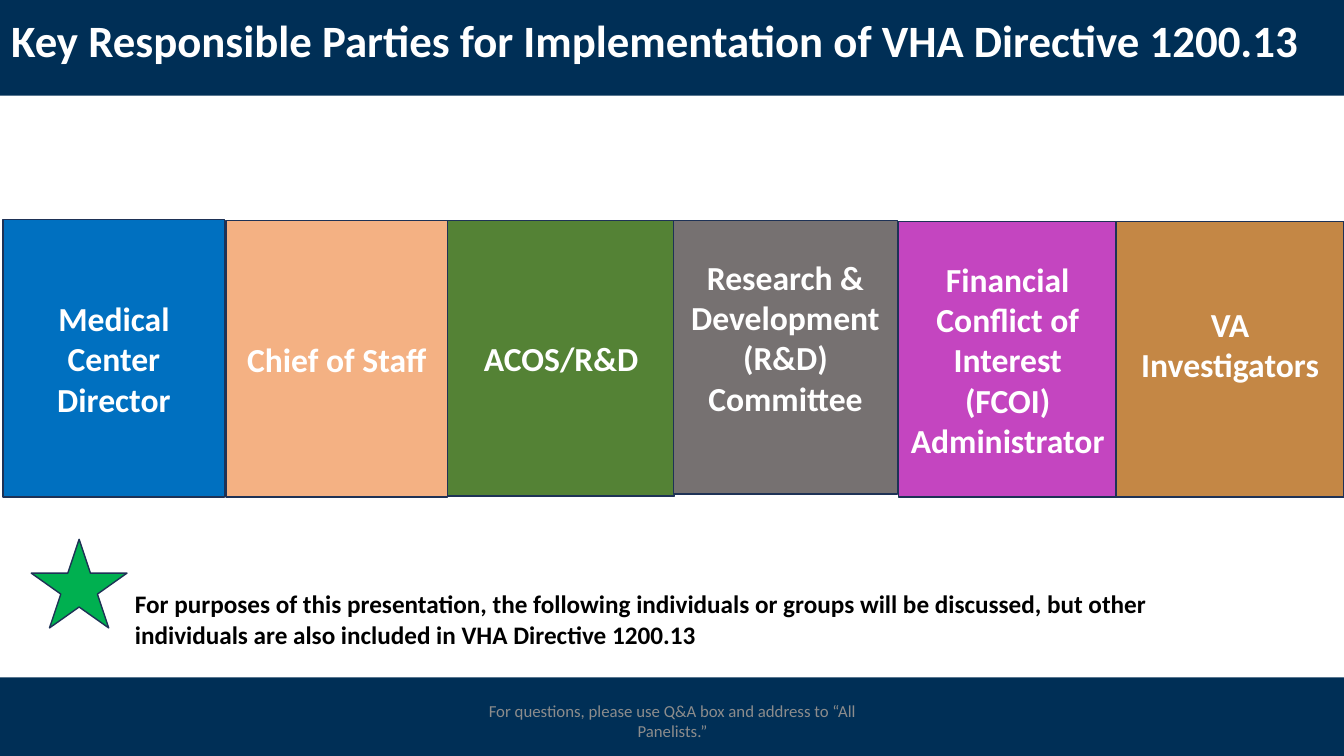
from dataclasses import dataclass

from pptx import Presentation
from pptx.dml.color import RGBColor
from pptx.enum.shapes import MSO_SHAPE as Shape
from pptx.enum.text import MSO_ANCHOR as Anchor, MSO_AUTO_SIZE as Fit, PP_ALIGN as Align
from pptx.util import Emu, Pt

SCALE = 9144  # EMU in one px, at 100 px to the inch
WIDE, HIGH = 1333, 750
FONT = "Calibri"
COLORS = {
    "navy": "002F56",
    "edge": "1E3256",
    "white": "FFFFFF",
    "black": "000000",
    "mute": "8C8C8C",
    "blue": "0070C0",
    "peach": "F4B183",
    "olive": "548235",
    "gray": "767171",
    "plum": "C445C0",
    "tan": "C48745",
    "green": "00B050",
}


@dataclass
class Box:
    left: int
    top: int
    width: int
    height: int


@dataclass
class Party:
    name: str
    color: str
    box: Box
    lift: int = 0  # room kept free below the text


PARTIES = [
    Party("Medical Center Director", "blue", Box(3, 218, 220, 275)),
    Party("Chief of Staff", "peach", Box(224, 219, 220, 274)),
    Party("ACOS/R&D", "olive", Box(444, 219, 225, 273)),
    Party("Research & Development (R&D) Committee", "gray", Box(668, 219, 222, 271), 40),
    Party("Financial Conflict of Interest (FCOI) Administrator", "plum", Box(891, 220, 217, 273)),
    Party("VA Investigators", "tan", Box(1107, 220, 226, 273), 30),
]


def px(size: int) -> Emu:
    return Emu(size * SCALE)


def edges(box: Box) -> tuple:
    return px(box.left), px(box.top), px(box.width), px(box.height)


def tint(name: str) -> RGBColor:
    return RGBColor.from_string(COLORS[name])


def write(shape, text: str, *, size: int, color: str = "white", bold: bool = True,
          align=Align.LEFT, anchor=Anchor.MIDDLE, lift: int = 0, space: float = 1.0) -> None:
    frame = shape.text_frame
    frame.word_wrap = True
    frame.auto_size = Fit.NONE
    frame.vertical_anchor = anchor
    frame.margin_left = frame.margin_right = px(10)
    frame.margin_top, frame.margin_bottom = px(5), px(5 + lift)
    frame.text = text
    para = frame.paragraphs[0]
    para.alignment = align
    para.line_spacing = space
    font = para.runs[0].font
    font.name, font.size, font.bold = FONT, Pt(size), bold
    font.color.rgb = tint(color)


def draw(slide, kind, box: Box, fill: str, edge: str = ""):
    shape = slide.shapes.add_shape(kind, *edges(box))
    shape.shadow.inherit = False
    shape.fill.solid()
    shape.fill.fore_color.rgb = tint(fill)
    if edge:
        shape.line.color.rgb = tint(edge)
        shape.line.width = Pt(1)
    else:
        shape.line.fill.background()
    return shape


def main() -> None:
    deck = Presentation()
    deck.slide_width, deck.slide_height = px(WIDE), px(HIGH)
    slide = deck.slides.add_slide(deck.slide_layouts[5])

    for band in (Box(0, 0, WIDE, 95), Box(0, 672, WIDE, 80)):
        draw(slide, Shape.RECTANGLE, band, "navy")

    title = slide.shapes.title
    title.left, title.top, title.width, title.height = edges(Box(1, 9, 1332, 68))
    write(title, "Key Responsible Parties for Implementation of VHA Directive 1200.13",
          size=32, space=0.9)
    slide.shapes._spTree.append(title._element)  # in front of the band

    foot = slide.shapes.add_textbox(*edges(Box(442, 695, 450, 40)))
    write(foot, "For questions, please use Q&A box and address to “All Panelists.”",
          size=12, color="mute", bold=False, align=Align.CENTER)

    for party in PARTIES:
        card = draw(slide, Shape.RECTANGLE, party.box, party.color, "edge")
        write(card, party.name, size=24, align=Align.CENTER, lift=party.lift)

    note = slide.shapes.add_textbox(*edges(Box(124, 579, 1083, 71)))
    write(note, "For purposes of this presentation, the following individuals or groups will be "
          "discussed, but other individuals are also included in VHA Directive 1200.13",
          size=18, color="black", anchor=Anchor.TOP)
    draw(slide, Shape.STAR_5_POINT, Box(31, 535, 95, 88), "green", "edge")

    deck.save("out.pptx")


if __name__ == "__main__":
    main()
